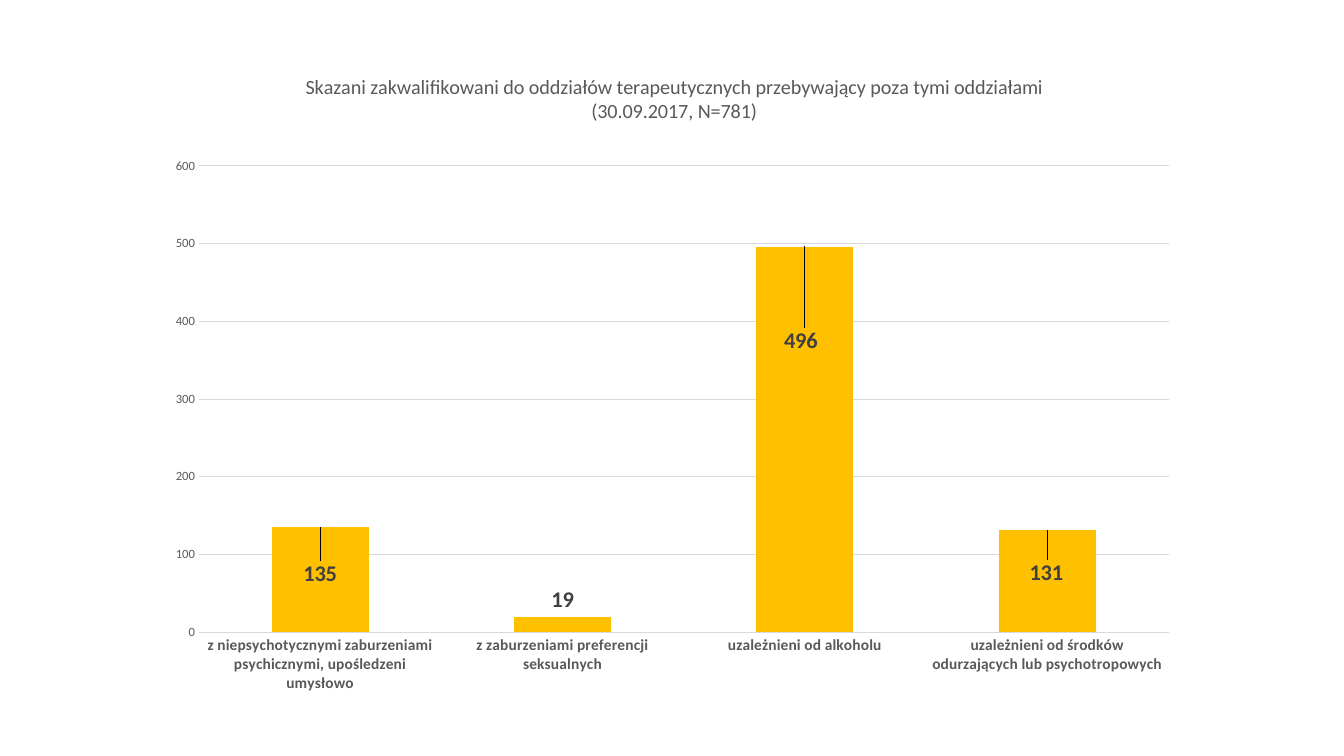
from lxml import etree
from pptx import Presentation
from pptx.chart.data import CategoryChartData
from pptx.dml.color import RGBColor
from pptx.enum.chart import XL_CHART_TYPE, XL_LABEL_POSITION, XL_TICK_MARK
from pptx.oxml.ns import qn
from pptx.util import Pt

EMU_PER_PX = 914400 / 100.8
COLORS = {"bar": "FFC000", "text": "595959", "label": "404040", "grid": "D9D9D9"}
CHART_WIDTH, CHART_HEIGHT = 1025, 667


def style_font(font, size, color, bold):
    font.name = "Calibri"
    font.size = Pt(size)
    font.bold = bold
    font.color.rgb = RGBColor.from_string(COLORS[color])


def set_layout(parent, index, **settings):
    """Put a manual layout into a chart element, at the given child index."""
    for old_layout in parent.findall(qn("c:layout")):
        parent.remove(old_layout)
    layout = etree.Element(qn("c:layout"))
    manual = etree.SubElement(layout, qn("c:manualLayout"))
    for name, value in settings.items():
        etree.SubElement(manual, qn(f"c:{name}"), val=str(value))
    parent.insert(index, layout)


presentation = Presentation()
presentation.slide_width = round(1344 * EMU_PER_PX)
presentation.slide_height = round(756 * EMU_PER_PX)
slide = presentation.slides.add_slide(presentation.slide_layouts[6])

chart_data = CategoryChartData()
chart_data.categories = [
    "z niepsychotycznymi zaburzeniami psychicznymi, upośledzeni umysłowo",
    "z zaburzeniami preferencji seksualnych",
    "uzależnieni od alkoholu",
    "uzależnieni od środków odurzających lub psychotropowych",
]
chart_data.add_series("Series 1", [135, 19, 496, 131])
box = [round(px * EMU_PER_PX) for px in (159, 44, CHART_WIDTH, CHART_HEIGHT)]
chart = slide.shapes.add_chart(XL_CHART_TYPE.COLUMN_CLUSTERED, *box, chart_data).chart
chart.has_legend = False
chart.font.name = "Calibri"
chart.font.size = Pt(10)

# Title
title_frame = chart.chart_title.text_frame
title_frame.text = (
    "Skazani zakwalifikowani do oddziałów terapeutycznych przebywający poza tymi oddziałami\n"
    "(30.09.2017, N=781)"
)
for paragraph in title_frame.paragraphs:
    style_font(paragraph.font, 14.4, "text", False)
title = chart.chart_title._element
set_layout(title, 1, xMode="edge", yMode="edge", x=0.14, y=0.04)

# Plot area and axes
set_layout(
    chart._chartSpace.chart.plotArea, 0, layoutTarget="inner",
    xMode="edge", yMode="edge", x=0.039, y=0.183, w=0.946, h=0.699,
)
category_axis, value_axis = chart.category_axis, chart.value_axis
for axis, size, bold in ((category_axis, 11, True), (value_axis, 9, False)):
    axis.major_tick_mark = XL_TICK_MARK.NONE
    axis.minor_tick_mark = XL_TICK_MARK.NONE
    axis.format.line.fill.background()
    style_font(axis.tick_labels.font, size, "text", bold)
value_axis.minimum_scale = 0
value_axis.maximum_scale = 600
value_axis.major_unit = 100
grid_line = value_axis.major_gridlines.format.line
grid_line.width = Pt(0.75)
grid_line.color.rgb = RGBColor.from_string(COLORS["grid"])

# Columns and value labels
plot = chart.plots[0]
plot.gap_width = 150
plot.vary_by_categories = False
series = plot.series[0]
series.format.fill.solid()
series.format.fill.fore_color.rgb = RGBColor.from_string(COLORS["bar"])
labels = series.data_labels
labels.show_value = True
labels.position = XL_LABEL_POSITION.OUTSIDE_END
style_font(labels.font, 16, "label", True)

# Labels of the taller columns are moved down into the column
for index, shift_x, shift_y in ((0, 0, 65), (2, -4, 112), (3, -1, 60)):
    label = series.points[index].data_label
    style_font(label.font, 16, "label", True)
    label.position = XL_LABEL_POSITION.OUTSIDE_END
    set_layout(
        label._get_or_add_dLbl(), 1,
        x=round(shift_x / CHART_WIDTH, 3), y=round(shift_y / CHART_HEIGHT, 3),
    )

presentation.save("out.pptx")
